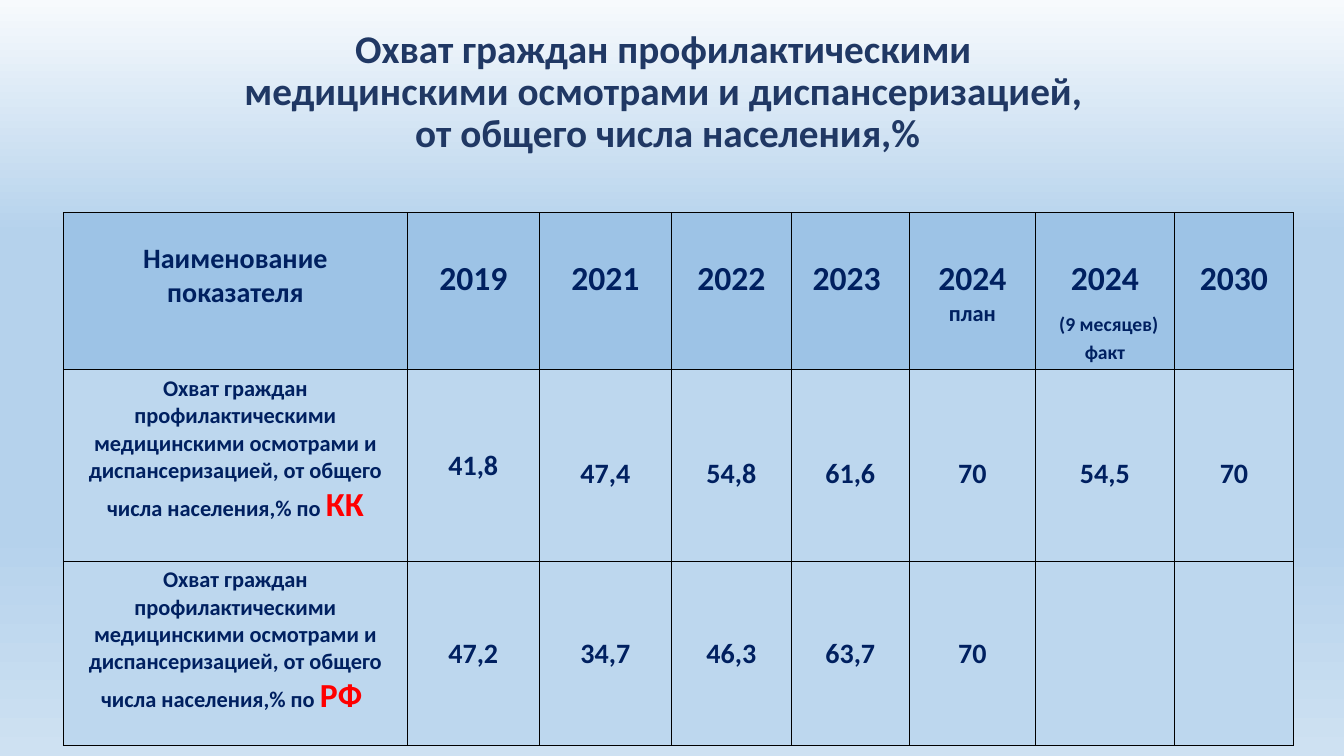
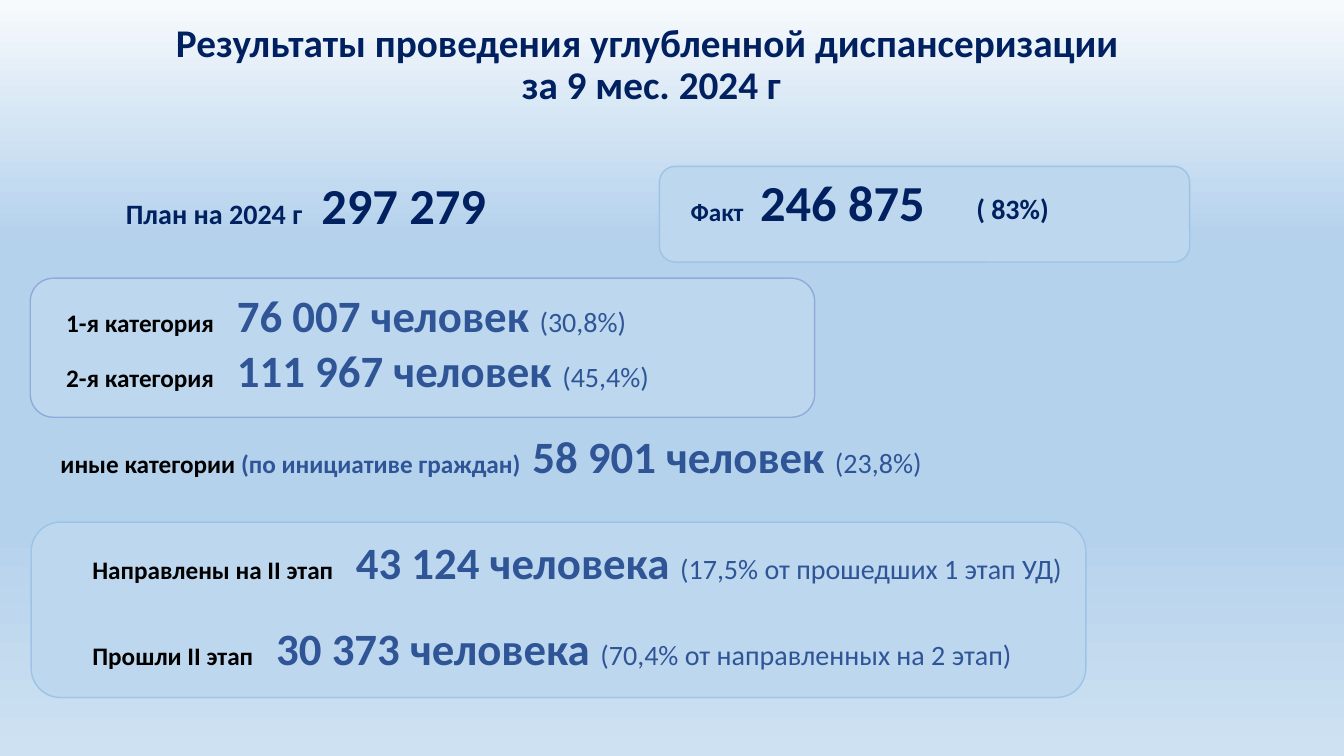
from dataclasses import dataclass
from typing import Optional

from lxml.etree import SubElement
from pptx import Presentation
from pptx.dml.color import RGBColor
from pptx.enum.shapes import MSO_SHAPE
from pptx.enum.text import MSO_ANCHOR, PP_ALIGN
from pptx.oxml.ns import qn
from pptx.util import Inches, Pt

FONT = "Calibri"
NAVY = "002060"
TITLE_BLUE = "203864"
TEXT_BLUE = "2F5597"
BLACK = "000000"
RED = "FF0000"
HEADER_FILL = "9DC3E6"
LIGHT_FILL = "BDD7EE"
CARD_LINE = "9DC3E6"
CATEGORY_LINE = "8FAADC"
BACKGROUND_STOPS = [(0, "F7FAFD"), (31, "B5D2EC"), (70, "B5D2EC"), (100, "CEE1F2")]


@dataclass(frozen=True)
class Span:
    text: str
    size: float
    color: str = NAVY
    bold: bool = True


@dataclass(frozen=True)
class Para:
    spans: tuple[Span, ...]
    align: PP_ALIGN = PP_ALIGN.LEFT
    spacing: float = 1.0
    before: float = 0
    tab: Optional[float] = None


@dataclass(frozen=True)
class Area:
    left: float
    top: float
    width: float
    height: float

    def lengths(self) -> list[int]:
        return [Inches(n) for n in (self.left, self.top, self.width, self.height)]


def rgb(color: str) -> RGBColor:
    return RGBColor.from_string(color)


def add_span(para, text: str, *, size: float, color: str, bold: bool) -> None:
    """Add formatted text, turning each newline into a line break."""
    for index, line in enumerate(text.split("\n")):
        if index:
            para.add_line_break()
        span = para.add_run()
        span.text = line
        span.font.name = FONT
        span.font.size = Pt(size)
        span.font.bold = bold
        span.font.color.rgb = rgb(color)


def fill_frame(frame, paras: tuple[Para, ...]) -> None:
    for index, content in enumerate(paras):
        para = frame.add_paragraph() if index else frame.paragraphs[0]
        para.alignment = content.align
        para.line_spacing = content.spacing
        if content.before:
            para.space_before = Pt(content.before)
        if content.tab is not None:
            tab_list = SubElement(para._p.get_or_add_pPr(), qn("a:tabLst"))
            SubElement(tab_list, qn("a:tab"), pos=str(Inches(content.tab)), algn="l")
        for span in content.spans:
            add_span(para, span.text, size=span.size, color=span.color, bold=span.bold)


def add_card(page, area: Area, line: str) -> None:
    card = page.shapes.add_shape(MSO_SHAPE.ROUNDED_RECTANGLE, *area.lengths())
    card.shadow.inherit = False
    card.fill.solid()
    card.fill.fore_color.rgb = rgb(LIGHT_FILL)
    card.line.color.rgb = rgb(line)
    card.line.width = Pt(1)


def add_text(page, area: Area, para: Para, *, inset_left: float = 0.1,
             anchor: MSO_ANCHOR = MSO_ANCHOR.TOP) -> None:
    frame = page.shapes.add_textbox(*area.lengths()).text_frame
    frame.word_wrap = True
    frame.vertical_anchor = anchor
    frame.margin_left = Inches(inset_left)
    fill_frame(frame, (para,))


def add_page(deck):
    """Add a blank slide with the shared gradient background."""
    page = deck.slides.add_slide(deck.slide_layouts[6])
    fill = page.background.fill
    fill.gradient()
    fill.gradient_angle = 270
    stops = page.element.find(".//" + qn("a:gsLst"))
    for stop in list(stops):
        stops.remove(stop)
    for percent, color in BACKGROUND_STOPS:
        stop = SubElement(stops, qn("a:gs"), pos=str(percent * 1000))
        SubElement(stop, qn("a:srgbClr"), val=color)
    return page


def centered(*spans: Span, spacing: float = 1.0) -> Para:
    return Para(spans, PP_ALIGN.CENTER, spacing)


def add_title(page, text: str, area: Area, color: str) -> None:
    add_text(page, area, centered(Span(text, 28, color), spacing=0.9),
             anchor=MSO_ANCHOR.MIDDLE)


def add_grid(page, left: float, top: float, widths: list[float], heights: list[float]):
    """Add a table without banding, sized by its columns and rows."""
    area = Area(left, top, sum(widths), sum(heights))
    table = page.shapes.add_table(len(heights), len(widths), *area.lengths()).table
    table.first_row = table.horz_banding = False
    for column, width in zip(table.columns, widths):
        column.width = Inches(width)
    for row, height in zip(table.rows, heights):
        row.height = Inches(height)
    return table


def format_cell(cell, paras: tuple[Para, ...], *, fill: Optional[str] = None,
                anchor: MSO_ANCHOR = MSO_ANCHOR.TOP, inset_top: float = 0.05) -> None:
    """Fill a cell and frame it in black; without a fill it stays invisible."""
    properties = cell._tc.get_or_add_tcPr()
    for side in ("L", "R", "T", "B"):
        border = SubElement(properties, qn(f"a:ln{side}"), w=str(Pt(1)))
        if fill:
            SubElement(SubElement(border, qn("a:solidFill")), qn("a:srgbClr"), val=BLACK)
        else:
            SubElement(border, qn("a:noFill"))
    if fill:
        cell.fill.solid()
        cell.fill.fore_color.rgb = rgb(fill)
    else:
        cell.fill.background()
    cell.vertical_anchor = anchor
    cell.margin_top = Inches(inset_top)
    fill_frame(cell.text_frame, paras)


def add_coverage_table(page) -> None:
    widths = [3.41, 1.31, 1.31, 1.19, 1.17, 1.25, 1.38, 1.18]
    years = ["2019", "2021", "2022", "2023 ", "2024", "2024", "2030"]
    year_notes = {
        4: (centered(Span("план", 16)),),
        5: (centered(Span(" ", 24), Span("(9 месяцев)", 14)),
            centered(Span("факт", 14))),
    }
    label = ("Охват граждан профилактическими медицинскими осмотрами "
             "и диспансеризацией, от общего числа населения,% по ")
    regions = [
        ("КК", ["41,8", "47,4", "54,8", "61,6", "70", "54,5", "70"],
         [1.0] + [1.5] * 6),
        ("РФ ", ["47,2", "34,7", "46,3", "63,7", "70"], [1.0] * 5),
    ]

    table = add_grid(page, 0.63, 2.11, widths, [1.56, 1.9, 1.83])
    format_cell(table.cell(0, 0), (centered(Span("Наименование показателя", 20)),),
                fill=HEADER_FILL, inset_top=0.29)
    for index, year in enumerate(years):
        paras = (centered(Span(year, 24)),) + year_notes.get(index, ())
        format_cell(table.cell(0, index + 1), paras, fill=HEADER_FILL, inset_top=0.46)

    for row, (region, values, spacings) in enumerate(regions, start=1):
        format_cell(table.cell(row, 0),
                    (centered(Span(label, 16), Span(region, 24, RED)),),
                    fill=LIGHT_FILL)
        for column in range(1, len(widths)):
            paras = ()
            if column <= len(values):
                paras = (centered(Span(values[column - 1], 20),
                                  spacing=spacings[column - 1]),)
            format_cell(table.cell(row, column), paras, fill=LIGHT_FILL,
                        anchor=MSO_ANCHOR.MIDDLE)


def people_line(label: str, count: str, share: str, *, tab: float,
                detail: str = "", before: float = 0) -> Para:
    """Label, tab, large head count and its share."""
    spans = [Span(label, 18, BLACK)]
    if detail:
        spans.append(Span(detail, 18, TEXT_BLUE))
    spans += [Span("\t", 18, BLACK), Span(f"{count} ", 32, TEXT_BLUE),
              Span(share, 20, TEXT_BLUE, bold=False)]
    return Para(tuple(spans), before=before, tab=tab)


def build_coverage(deck) -> None:
    page = add_page(deck)
    add_title(page, "Охват граждан профилактическими \n"
                    "медицинскими осмотрами и диспансеризацией, \n"
                    "от общего числа населения,%",
              Area(0.76, 0.23, 11.72, 1.38), TITLE_BLUE)
    add_coverage_table(page)


def build_results(deck) -> None:
    page = add_page(deck)
    cards = [
        (Area(0.31, 5.18, 10.46, 1.74), CARD_LINE),
        (Area(0.3, 2.76, 7.78, 1.38), CATEGORY_LINE),
        (Area(6.54, 1.65, 5.26, 0.95), CARD_LINE),
    ]
    for area, line in cards:
        add_card(page, area, line)

    add_title(page, "Результаты проведения углубленной диспансеризации \n"
                    "за 9 мес. 2024 г",
              Area(0, 0.19, 12.92, 0.92), NAVY)
    add_text(page, Area(1.15, 1.59, 3.8, 0.8),
             Para((Span("План на 2024 г\t", 20), Span("297 279", 36)),
                  spacing=1.15, tab=1.94))
    add_text(page, Area(6.08, 1.65, 4.04, 0.71),
             Para((Span("Факт\t", 18), Span("246 875", 36)), tab=0.69),
             inset_left=0.77)
    add_text(page, Area(9.29, 1.85, 1.57, 0.44), centered(Span("( 83%) ", 20)))

    categories = (
        people_line(" 1-я категория", "76 007 человек", "(30,8%)", tab=1.75),
        people_line(" 2-я категория", "111 967 человек", "(45,4%)", tab=1.75),
        people_line("иные категории ", "58 901 человек", "(23,8%)", tab=4.68,
                    detail="(по инициативе граждан)", before=22),
    )
    stages = (
        people_line(" Направлены на II этап", "43 124 человека",
                    "(17,5% от прошедших 1 этап УД)", tab=2.67),
        people_line(" Прошли II этап", "30 373 человека",
                    "(70,4% от направленных на 2 этап)", tab=1.88, before=22),
    )
    for left, top, width, height, paras in [
        (0.5, 2.83, 10.83, 2.34, categories),
        (0.76, 5.28, 12.57, 2.06, stages),
    ]:
        format_cell(add_grid(page, left, top, [width], [height]).cell(0, 0), paras)


def main() -> None:
    deck = Presentation()
    deck.slide_width = Inches(13.33)
    deck.slide_height = Inches(7.5)
    build_coverage(deck)
    build_results(deck)
    deck.save("out.pptx")


if __name__ == "__main__":
    main()
